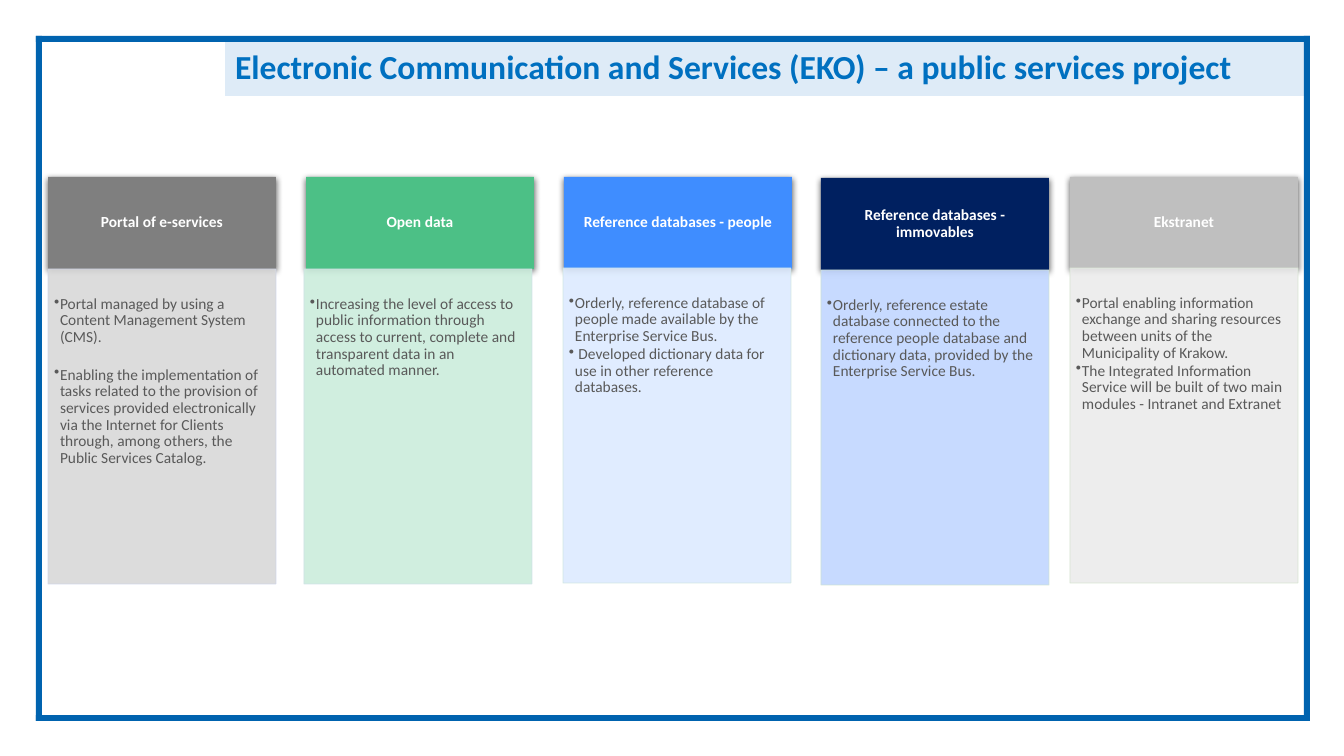
import pptx
import pptx.dml.color
import pptx.enum.shapes
import pptx.enum.text
import pptx.util
from lxml import etree
from pptx.oxml.ns import qn

EMU_PER_PX = 914400 / 100.8
COLUMN_WIDTH, HEADER_HEIGHT, BODY_HEIGHT = 228, 92, 315
COLUMNS = [
    ((48, 177), (48, 269), "7F7F7F", "D9D9D9", "CFD5EA", 15, "Portal of e-services", [
        "Portal managed by using a Content Management System (CMS).",
        "Enabling the implementation of tasks related to the provision of services provided "
        "electronically via the Internet for Clients through, among others, the Public "
        "Services Catalog."]),
    ((306, 177), (304, 269), "4CC086", "CBEDDC", "CFE2E8", 1, "Open data", [
        "Increasing the level of access to public information through access to current, "
        "complete and transparent data in an automated manner."]),
    ((564, 177), (563, 268), "3F8DFF", "DDEBFF", "CFE6E0", 1, "Reference databases - people", [
        "Orderly, reference database of people made available by the Enterprise Service Bus.",
        " Developed dictionary data for use in other reference databases."]),
    ((821, 178), (821, 270), "002060", "C1D6FF", "CFE5D4", 1, "Reference databases - immovables", [
        "Orderly, reference estate database connected to the reference people database and "
        "dictionary data, provided by the Enterprise Service Bus."]),
    ((1070, 177), (1070, 268), "BFBFBF", "ECECEC", "D5E3CF", 1, "Ekstranet", [
        "Portal enabling information exchange and sharing resources between units of the "
        "Municipality of Krakow.",
        "The Integrated Information Service will be built of two main modules - Intranet "
        "and Extranet"]),
]


def px(length):
    """Turn pixels into EMU."""
    return pptx.util.Emu(round(length * EMU_PER_PX))


def color(hex_value):
    """Turn a hex string into a colour."""
    return pptx.dml.color.RGBColor.from_string(hex_value)


def add_rect(slide, box, fill):
    """Add a flat rectangle without outline."""
    rect = slide.shapes.add_shape(
        pptx.enum.shapes.MSO_SHAPE.RECTANGLE, *[px(side) for side in box])
    rect.shadow.inherit = False
    rect.fill.solid()
    rect.fill.fore_color.rgb = color(fill)
    rect.line.fill.background()
    return rect


def set_frame(frame, insets, anchor):
    """Set wrapping, insets in px and anchor of a text frame."""
    frame.word_wrap = True
    frame.auto_size = pptx.enum.text.MSO_AUTO_SIZE.NONE
    frame.margin_left, frame.margin_top, frame.margin_right, frame.margin_bottom = map(px, insets)
    frame.vertical_anchor = anchor


def style(paragraph, size, fill, bold, align):
    """Format one paragraph."""
    paragraph.alignment = align
    paragraph.line_spacing = 0.9
    paragraph.space_before = pptx.util.Pt(0)
    paragraph.font.name = "Calibri"
    paragraph.font.size = pptx.util.Pt(size)
    paragraph.font.bold = bold
    paragraph.font.color.rgb = color(fill)


def add_alpha(parent, percent):
    """Give the colours below an element an opacity."""
    for rgb in parent.iter(qn("a:srgbClr")):
        etree.SubElement(rgb, qn("a:alpha"), val=str(percent * 1000))


def add_border(slide, left, top, width, height, thick):
    """Draw the blue border from four bars."""
    for bar in ((left, top, width, thick), (left, top + height - thick, width, thick),
                (left, top, thick, height), (left + width - thick, top, thick, height)):
        add_rect(slide, bar, "0063AF")


def add_title(slide, box, text):
    """Fill and place the title."""
    title = slide.shapes.title
    title.left, title.top, title.width, title.height = map(px, box)
    title.fill.solid()
    title.fill.fore_color.rgb = color("DEEBF7")
    set_frame(title.text_frame, (10, 5, 10, 5), pptx.enum.text.MSO_ANCHOR.MIDDLE)
    title.text_frame.text = text
    style(title.text_frame.paragraphs[0], 24, "0070C0", True, pptx.enum.text.PP_ALIGN.LEFT)


def add_header(slide, box, fill, text):
    """Add a column header with a soft shadow."""
    header = add_rect(slide, box, fill)
    effects = header._element.spPr.find(qn("a:effectLst"))
    shadow = etree.SubElement(effects, qn("a:outerShdw"), blurRad="57150", dist="19050",
                              dir="5400000", algn="ctr", rotWithShape="0")
    etree.SubElement(shadow, qn("a:srgbClr"), val="000000")
    add_alpha(shadow, 63)
    set_frame(header.text_frame, (9, 5, 9, 5), pptx.enum.text.MSO_ANCHOR.MIDDLE)
    header.text_frame.text = text
    style(header.text_frame.paragraphs[0], 11, "FFFFFF", True, pptx.enum.text.PP_ALIGN.CENTER)


def add_body(slide, box, fill, outline, gap, items):
    """Add a column body with its bulleted items."""
    body = add_rect(slide, box, fill)
    body.line.color.rgb = color(outline)
    body.line.width = pptx.util.Pt(0.5)
    add_alpha(body._element.spPr, 90)
    set_frame(body.text_frame, (6, 27, 9, 10), pptx.enum.text.MSO_ANCHOR.TOP)
    body.text_frame.text = "\n".join(items)
    for item in body.text_frame.paragraphs:
        properties = item._p.get_or_add_pPr()
        properties.set("marL", str(px(6)))
        properties.set("indent", str(px(-6)))
        etree.SubElement(properties, qn("a:buChar"), char="•")
        item.space_after = pptx.util.Pt(gap)
        style(item, 11, "595959", False, pptx.enum.text.PP_ALIGN.LEFT)


def main():
    """Build the slide and save it."""
    deck = pptx.Presentation()
    deck.slide_width, deck.slide_height = px(1344), px(756)
    slide = deck.slides.add_slide(deck.slide_layouts[5])
    add_border(slide, 36, 36, 1274, 685, 6)
    add_title(slide, (225, 41, 1079, 55),
              "Electronic Communication and Services (EKO) – a public services project")
    for header_at, body_at, header_fill, body_fill, outline, gap, heading, items in COLUMNS:
        add_header(slide, (*header_at, COLUMN_WIDTH, HEADER_HEIGHT), header_fill, heading)
        add_body(slide, (*body_at, COLUMN_WIDTH, BODY_HEIGHT), body_fill, outline, gap, items)
    deck.save("out.pptx")


if __name__ == "__main__":
    main()
